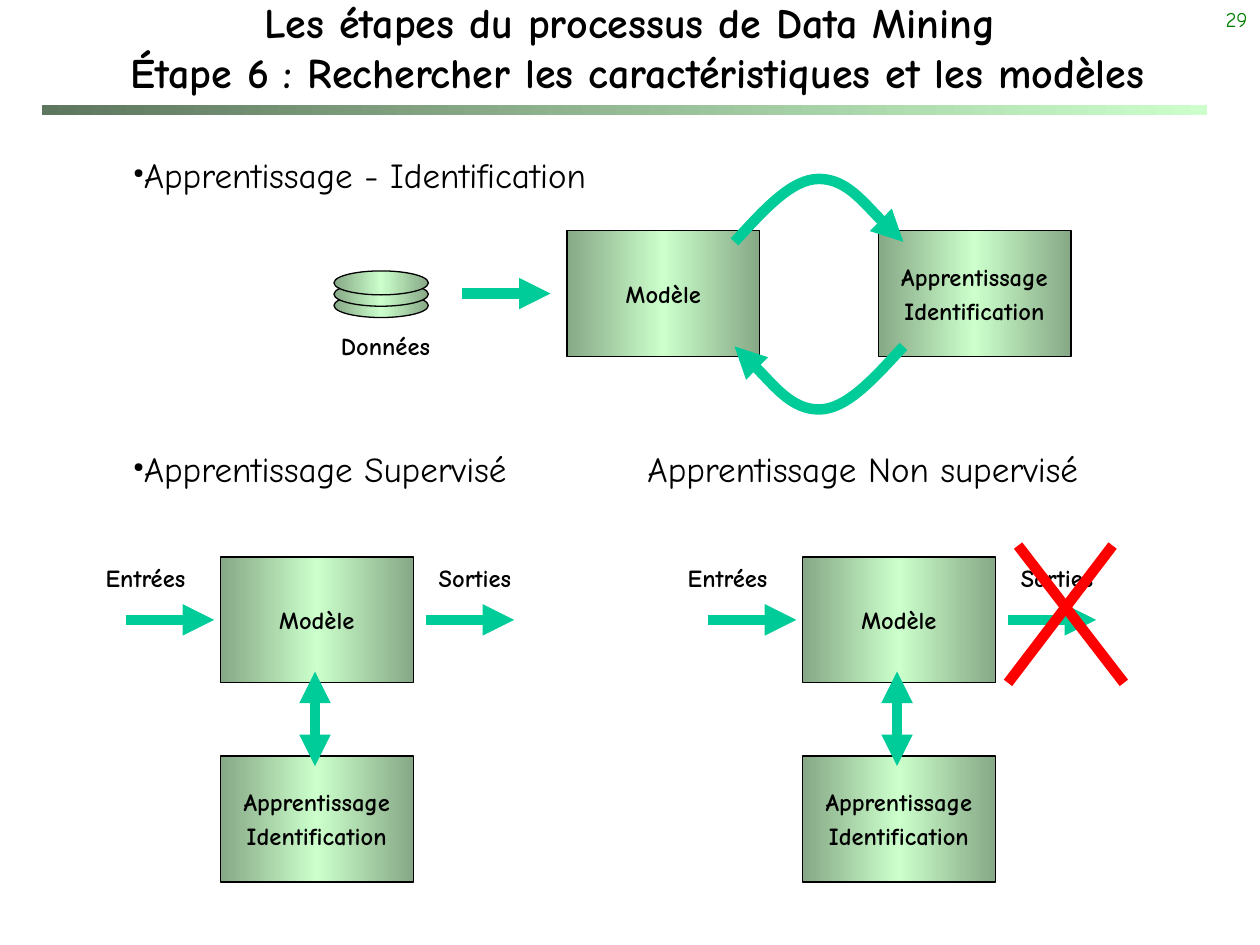
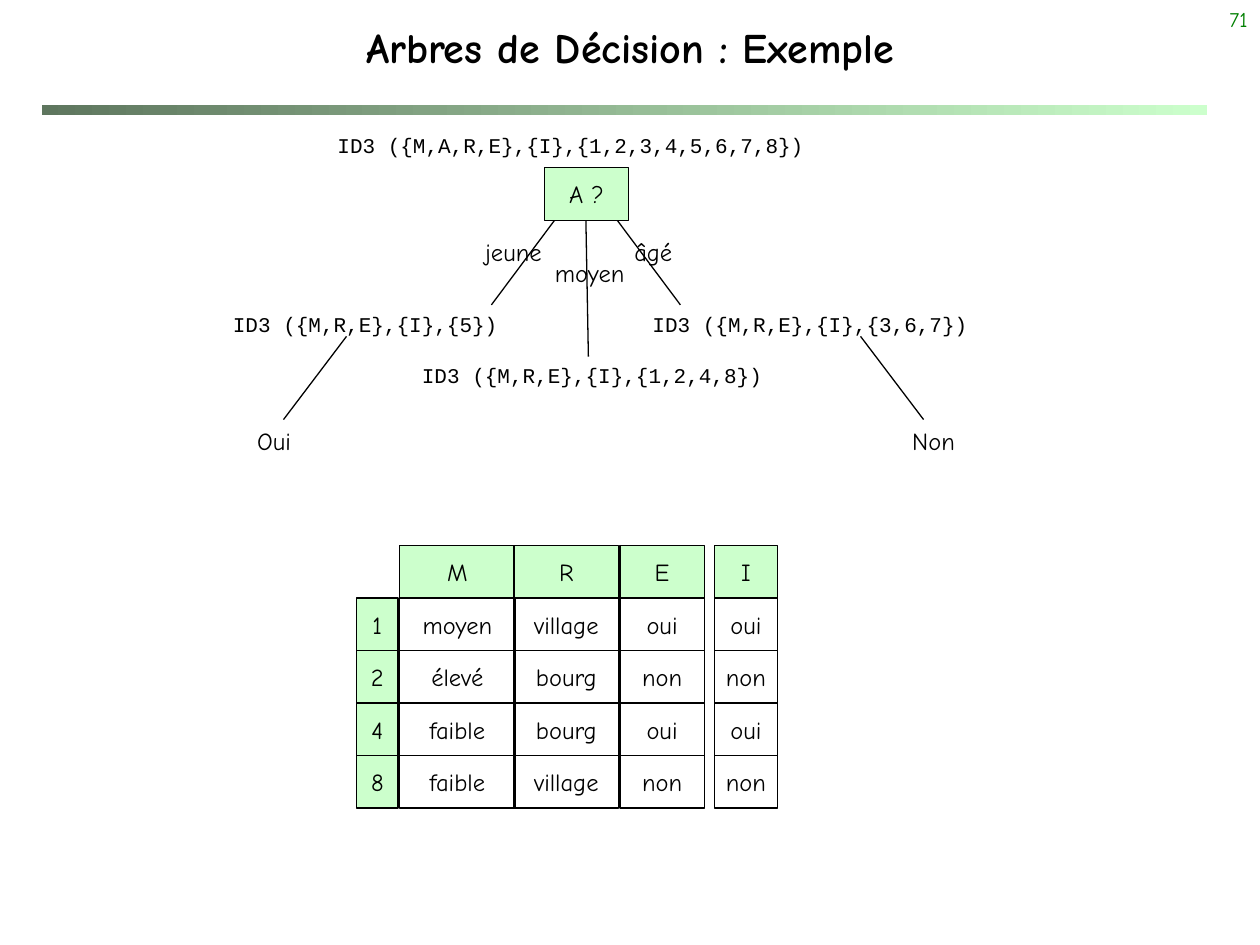
from dataclasses import dataclass

from lxml import etree
from pptx import Presentation
from pptx.dml.color import RGBColor
from pptx.enum.shapes import MSO_CONNECTOR, MSO_SHAPE
from pptx.enum.text import MSO_ANCHOR, MSO_AUTO_SIZE, PP_ALIGN
from pptx.oxml.ns import qn
from pptx.util import Inches, Pt

RECTANGLE, ELLIPSE = MSO_SHAPE.RECTANGLE, MSO_SHAPE.OVAL
STRAIGHT = MSO_CONNECTOR.STRAIGHT
FIT_SHAPE = MSO_AUTO_SIZE.SHAPE_TO_FIT_TEXT
LEFT, CENTER, RIGHT = PP_ALIGN.LEFT, PP_ALIGN.CENTER, PP_ALIGN.RIGHT
TOP, MIDDLE = MSO_ANCHOR.TOP, MSO_ANCHOR.MIDDLE


@dataclass(frozen=True)
class Theme:
    font: str = "Comic Neue"
    code_font: str = "Courier New"
    ink: str = "000000"
    number: str = "008000"
    mint: str = "CCFFCC"
    sage: str = "86A886"
    moss: str = "5E765E"
    arrow: str = "00CC99"
    cross: str = "FF0000"
    title_size: int = 24
    body_size: int = 20
    label_size: int = 14
    small_size: int = 12
    thin: float = 0.75
    thick: float = 6


THEME = Theme()
SHADED = (THEME.sage, THEME.mint, THEME.sage)
BOX_SIZE = (1.53, 1)
LEARNING = "Apprentissage\nIdentification"


# --- Text and drawing helpers ---
def write(frame, text, *, size=THEME.label_size, font=THEME.font, color=THEME.ink,
          bold=False, align=CENTER, anchor=TOP, wrap=False, spaced=True):
    """Fill a text frame: newlines split paragraphs, vertical tabs break lines."""
    frame.word_wrap = wrap
    frame.vertical_anchor = anchor
    for index, line in enumerate(text.split("\n")):
        paragraph = frame.add_paragraph() if index else frame.paragraphs[0]
        paragraph.text = line
        paragraph.alignment = align
        if spaced:
            paragraph.space_before = Pt(round(size * 0.2, 1))
        for run in paragraph.runs:
            run.font.name, run.font.size, run.font.bold = font, Pt(size), bold
            run.font.color.rgb = RGBColor.from_string(color)


def add_text(slide, text, left, top, width, height, **text_format):
    box = slide.shapes.add_textbox(*map(Inches, (left, top, width, height)))
    write(box.text_frame, text, **text_format)
    return box


def add_label(slide, text, left, top, width, height=0.33, **text_format):
    """Add a one-line text whose box grows with it."""
    label = add_text(slide, text, left, top, width, height, **text_format)
    label.text_frame.auto_size = FIT_SHAPE


def paint_line(line, color, width):
    line.color.rgb = RGBColor.from_string(color)
    line.width = Pt(width)


def paint_gradient(shape, colors):
    """Spread the colours evenly from left to right."""
    shape.fill.gradient()
    shape.fill.gradient_angle = 0
    stops = shape._element.spPr.find(".//" + qn("a:gsLst"))
    for stop in list(stops):
        stops.remove(stop)
    for index, color in enumerate(colors):
        position = str(100000 * index // (len(colors) - 1))
        stop = etree.SubElement(stops, qn("a:gs"), pos=position)
        etree.SubElement(stop, qn("a:srgbClr"), val=color)


def add_shape(slide, kind, left, top, width, height, colors=(), outlined=True):
    """Add a shape with no fill, one plain colour or a gradient."""
    shape = slide.shapes.add_shape(kind, *map(Inches, (left, top, width, height)))
    shape.shadow.inherit = False
    if len(colors) > 1:
        paint_gradient(shape, colors)
    elif colors:
        shape.fill.solid()
        shape.fill.fore_color.rgb = RGBColor.from_string(colors[0])
    else:
        shape.fill.background()
    if outlined:
        paint_line(shape.line, THEME.ink, THEME.thin)
    else:
        shape.line.fill.background()
    return shape


def add_box(slide, text, left, top, width, height, colors=(), bold=False):
    box = add_shape(slide, RECTANGLE, left, top, width, height, colors)
    write(box.text_frame, text, bold=bold, anchor=MIDDLE)


def add_process_box(slide, text, left, top):
    add_box(slide, text, left, top, *BOX_SIZE, SHADED, bold=True)


def add_arrowheads(shape, *ends):
    line = shape._element.spPr.find(qn("a:ln"))
    for end in ends:
        etree.SubElement(line, qn("a:" + end), type="triangle")


def add_line(slide, start, finish, color=THEME.ink, width=THEME.thin, ends=()):
    line = slide.shapes.add_connector(STRAIGHT, *map(Inches, (*start, *finish)))
    paint_line(line.line, color, width)
    etree.SubElement(line._element.spPr, qn("a:effectLst"))
    add_arrowheads(line, *ends)


def add_arrow(slide, start, finish, ends=("tailEnd",)):
    add_line(slide, start, finish, THEME.arrow, THEME.thick, ends)


def add_curved_arrow(slide, points):
    """Draw cubic curves: a start, then three points for each curve."""
    points = [(Inches(x), Inches(y)) for x, y in points]
    builder = slide.shapes.build_freeform(*points[0])
    builder.add_line_segments(points[1:], close=False)
    curve = builder.convert_to_shape()
    outline = curve._element.spPr.find(".//" + qn("a:path"))
    segments = outline.findall(qn("a:lnTo"))
    for first in range(0, len(segments), 3):
        cubic = etree.SubElement(outline, qn("a:cubicBezTo"))
        for segment in segments[first:first + 3]:
            cubic.append(segment[0])
            outline.remove(segment)
    curve.shadow.inherit = False
    curve.fill.background()
    paint_line(curve.line, THEME.arrow, THEME.thick)
    add_arrowheads(curve, "tailEnd")


# --- Parts shared by both slides ---
def add_base_slide(presentation, title, number):
    slide = presentation.slides.add_slide(presentation.slide_layouts[6])
    add_shape(slide, RECTANGLE, 0.33, 0.83, 9.25, 0.08,
              (THEME.moss, THEME.mint), outlined=False)
    add_text(slide, number, 7.92, 0, 2.08, 0.5, size=THEME.small_size,
             color=THEME.number, align=RIGHT, wrap=True, spaced=False)
    add_text(slide, title, 0, 0.08, 10, 0.58, size=THEME.title_size, bold=True,
             anchor=MIDDLE, wrap=True, spaced=False)
    return slide


# --- Slide 29: learning and identification ---
def add_heading(slide, text, left, top, bullet=True):
    box = add_text(slide, text, left, top, 4.2, 0.45, size=THEME.body_size,
                   align=LEFT, wrap=True)
    if bullet:
        properties = box.text_frame.paragraphs[0]._p.get_or_add_pPr()
        properties.set("marL", "0")
        properties.set("indent", str(Inches(0.21)))
        etree.SubElement(properties, qn("a:buSzPct"), val="38000")
        etree.SubElement(properties, qn("a:buChar"), char="●")


def add_learning_loop(slide, left, top):
    # Data store
    for layer in range(3):
        add_shape(slide, ELLIPSE, left, top + 0.5 - 0.09 * layer, 0.75, 0.19, SHADED)
    add_label(slide, "Données", left - 0.07, top + 0.75, 0.96, bold=True)
    add_arrow(slide, (left + 1.02, top + 0.5), (left + 1.72, top + 0.5))
    # Model and learning boxes
    add_process_box(slide, "Modèle", left + 1.85, top)
    add_process_box(slide, LEARNING, left + 4.32, top)
    # Upper arc; the lower one is the same arc turned half a turn
    width, height = 1.34, 0.5
    arc = [(0, 0.5), (0.23, 0.25), (0.45, 0), (0.67, 0),
           (0.89, 0), (1.23, 0.41), (width, height)]
    arc_left = left + 3.18
    add_curved_arrow(slide, [(arc_left + x, top - 0.41 + y) for x, y in arc])
    add_curved_arrow(slide, [(arc_left + width - x, top + 0.92 + height - y)
                             for x, y in arc])


def add_learning_mode(slide, left, top, supervised):
    flow_y = top + 0.5
    add_process_box(slide, "Modèle", left + 0.75, top)
    add_process_box(slide, LEARNING, left + 0.75, top + 1.58)
    for label, label_x, width, arrow_x in (("Entrées", -0.31, 0.93, 0),
                                           ("Sorties", 2.33, 0.88, 2.38)):
        add_arrow(slide, (left + arrow_x, flow_y), (left + arrow_x + 0.7, flow_y))
        add_label(slide, label, left + label_x, top, width, bold=True)
    add_arrow(slide, (left + 1.5, top + 0.91), (left + 1.5, top + 1.66),
              ("headEnd", "tailEnd"))
    # Crossed-out outputs
    if not supervised:
        for start_x, finish_x in ((3.21, 2.38), (2.46, 3.3)):
            add_line(slide, (left + start_x, top - 0.09), (left + finish_x, top + 1),
                     THEME.cross, THEME.thick)


def build_learning_slide(presentation):
    slide = add_base_slide(
        presentation,
        "Les étapes du processus de Data Mining\v"
        " Étape 6 : Rechercher les caractéristiques et les modèles", "29")
    add_heading(slide, "Apprentissage - Identification", 0.75, 1.17)
    add_heading(slide, "Apprentissage Supervisé", 0.75, 3.5)
    add_heading(slide, "Apprentissage Non supervisé", 5.04, 3.5, bullet=False)
    add_learning_loop(slide, 2.65, 1.83)
    add_learning_mode(slide, 1, 4.42, supervised=True)
    add_learning_mode(slide, 5.62, 4.42, supervised=False)


# --- Slide 71: decision tree ---
def add_tree(slide, left, top):
    # Root test
    add_box(slide, "A ?", left + 2.57, top + 0.33, 0.67, 0.42, (THEME.mint,))
    # Branches
    for start_x, start_y, finish_x, finish_y in (
            (2.65, 0.75, 2.15, 1.42), (3.15, 0.75, 3.65, 1.42),
            (2.9, 0.75, 2.92, 1.83), (1, 1.67, 0.5, 2.33), (5.08, 1.67, 5.58, 2.33)):
        add_line(slide, (left + start_x, top + start_y),
                 (left + finish_x, top + finish_y))
    # Branch values and leaves
    for text, x, y, width in (
            ("jeune", 1.98, 0.83, 0.69), ("âgé", 3.18, 0.83, 0.51),
            ("moyen", 2.55, 1, 0.76), ("Oui", 0.17, 2.33, 0.51),
            ("Non", 5.38, 2.33, 0.56)):
        add_label(slide, text, left + x, top + y, width)
    # Calls
    for text, x, y, width in (
            ("ID3 ({M,A,R,E},{I},{1,2,3,4,5,6,7,8})", 0.83, 0, 3.93),
            ("ID3 ({M,R,E},{I},{5})", 0, 1.42, 2.32),
            ("ID3 ({M,R,E},{I},{1,2,4,8})", 1.5, 1.83, 2.92),
            ("ID3 ({M,R,E},{I},{3,6,7})", 3.33, 1.42, 2.72)):
        add_label(slide, text, left + x, top + y, width, 0.3,
                  size=THEME.small_size, font=THEME.code_font, align=LEFT)


def add_example_grid(slide, left, top):
    """Lay out boxes in columns; the class column stands apart."""
    columns = ((0, 0.33, ("", "1", "2", "4", "8")),
               (0.34, 0.92, ("M", "moyen", "élevé", "faible", "faible")),
               (1.25, 0.83, ("R", "village", "bourg", "bourg", "village")),
               (2.09, 0.67, ("E", "oui", "non", "oui", "non")),
               (2.84, 0.5, ("I", "oui", "non", "oui", "non")))
    row_pitch = 5 / 12
    for x, width, values in columns:
        for row, value in enumerate(values):
            is_header = row == 0 or x == 0
            if value:
                add_box(slide, value, left + x, top + row * row_pitch, width,
                        row_pitch, (THEME.mint,) if is_header else ())


def build_tree_slide(presentation):
    slide = add_base_slide(presentation, "Arbres de Décision : Exemple", "71")
    add_tree(slide, 1.75, 1)
    add_example_grid(slide, 2.83, 4.33)


def main():
    presentation = Presentation()
    presentation.slide_width, presentation.slide_height = Inches(10), Inches(7.5)
    build_learning_slide(presentation)
    build_tree_slide(presentation)
    presentation.save("out.pptx")


if __name__ == "__main__":
    main()
